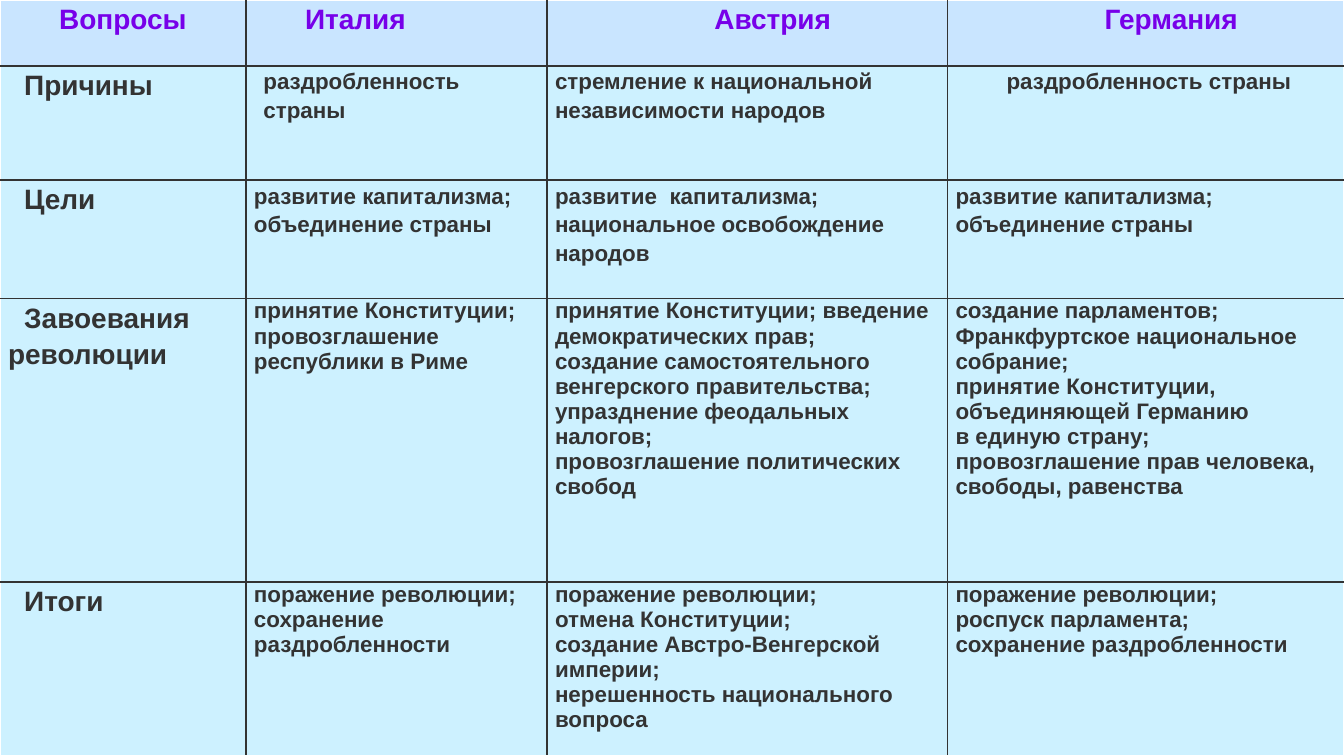
from copy import deepcopy

from lxml.etree import SubElement
from pptx import Presentation
from pptx.dml.color import RGBColor
from pptx.enum.text import PP_ALIGN as Align
from pptx.oxml.ns import qn
from pptx.util import Inches, Pt

# A 16:9 slide, in inches
WIDTH = 10
HEIGHT = WIDTH * 9 / 16

# Table grid, as percentages of the slide
COLS = [18.3, 22.4, 29.8, 29.5]
ROWS = [8.7, 15.1, 15.7, 37.5, 23]

HEAD_FILL, BODY_FILL = "C9E5FF", "CDF1FF"
VIOLET, DARK, WHITE = "7700E9", "333333", "FFFFFF"

# Each cell is a list of paragraphs; \v is a line break
TABLE = [
    [["Вопросы"], ["Италия"], ["Австрия"], ["Германия"]],
    [["Причины"],
     ["раздробленность страны"],
     ["стремление к национальной независимости народов"],
     ["раздробленность страны"]],
    [["Цели"],
     ["развитие капитализма;", "объединение страны"],
     ["развитие  капитализма;", "национальное освобождение народов"],
     ["развитие капитализма;", "объединение страны"]],
    [["Завоевания  революции"],
     ["принятие Конституции;", "провозглашение", "республики в Риме"],
     ["принятие Конституции; введение демократических прав;",
      "создание самостоятельного венгерского правительства;",
      "упразднение феодальных налогов;",
      "провозглашение политических свобод"],
     ["создание парламентов;",
      "Франкфуртское национальное собрание;",
      "принятие Конституции, объединяющей Германию \vв единую страну;",
      "провозглашение прав человека, свободы, равенства"]],
    [["Итоги"],
     ["поражение революции;", "сохранение раздробленности"],
     ["поражение революции;", "отмена Конституции;",
      "создание Австро-Венгерской империи;",
      "нерешенность национального вопроса"],
     ["поражение революции;", "роспуск парламента;",
      "сохранение раздробленности"]],
]

# Left margin and first-line indent in inches, where a cell has its own
INDENTS = {(0, 0): (0.29, -0.29), (0, 1): (0.38, 0), (0, 2): (0.38, 0),
           (0, 3): (0.38, 0), (1, 1): (0.07, 0), (1, 3): (0.38, 0)}
LABEL_INDENT = (0, 0.12)


def rgb(color):
    return RGBColor.from_string(color)


def set_attrs(obj, values):
    for name, value in values.items():
        setattr(obj, name, value)


def set_borders(cell, row, col):
    """White lines on the outer edge of the table, dark ones inside."""
    outer = {"L": col == 0, "R": col == len(COLS) - 1,
             "T": row == 0, "B": row == len(ROWS) - 1}
    tc_pr = cell._tc.get_or_add_tcPr()
    for i, (side, is_outer) in enumerate(outer.items()):
        ln = SubElement(tc_pr, qn(f"a:ln{side}"), w=str(Pt(1)))
        fill = SubElement(ln, qn("a:solidFill"))
        SubElement(fill, qn("a:srgbClr"), val=WHITE if is_outer else DARK)
        tc_pr.insert(i, ln)


def write_paragraph(p, text, font, spacing, align, indent):
    p.text = text
    set_attrs(p, {"line_spacing": spacing, "alignment": align})
    p_pr = p._p.get_or_add_pPr()
    for name, value in zip(("marL", "indent"), indent):
        p_pr.set(name, str(Inches(value)))
    for r in p.runs:
        set_attrs(r.font, {k: v for k, v in font.items() if k != "color"})
        r.font.color.rgb = rgb(font["color"])
    # Line breaks take the height of the text around them
    for br in p._p.findall(qn("a:br")):
        br.append(deepcopy(p.runs[0]._r.rPr))


def fill_cell(cell, row, col, lines):
    head, label = row == 0, col == 0
    set_attrs(cell, {"margin_left": Inches(0.06), "margin_right": Inches(0.06),
                     "margin_top": 0, "margin_bottom": 0})
    cell.fill.solid()
    cell.fill.fore_color.rgb = rgb(HEAD_FILL if head else BODY_FILL)
    set_borders(cell, row, col)

    font = {"name": "Arial", "bold": True, "size": Pt(15 if head or label else 12),
            "color": VIOLET if head else DARK}
    spacing = 1.15 if label or row < 3 else 1.0
    align = Align.CENTER if head and col != 1 else Align.LEFT
    indent = INDENTS.get((row, col), LABEL_INDENT if label else (0, 0))
    tf = cell.text_frame
    for i, text in enumerate(lines):
        p = tf.add_paragraph() if i else tf.paragraphs[0]
        write_paragraph(p, text, font, spacing, align, indent)


def add_comparison_table(s):
    table = s.shapes.add_table(len(ROWS), len(COLS), 0, 0,
                               Inches(WIDTH), Inches(HEIGHT)).table
    set_attrs(table, {"first_row": False, "horz_banding": False})
    for column, share in zip(table.columns, COLS):
        column.width = Inches(WIDTH * share / 100)
    for table_row, share in zip(table.rows, ROWS):
        table_row.height = Inches(HEIGHT * share / 100)
    for row, cells in enumerate(TABLE):
        for col, lines in enumerate(cells):
            fill_cell(table.cell(row, col), row, col, lines)


def main():
    prs = Presentation()
    set_attrs(prs, {"slide_width": Inches(WIDTH), "slide_height": Inches(HEIGHT)})
    s = prs.slides.add_slide(prs.slide_layouts[6])
    add_comparison_table(s)
    prs.save("out.pptx")


if __name__ == "__main__":
    main()
